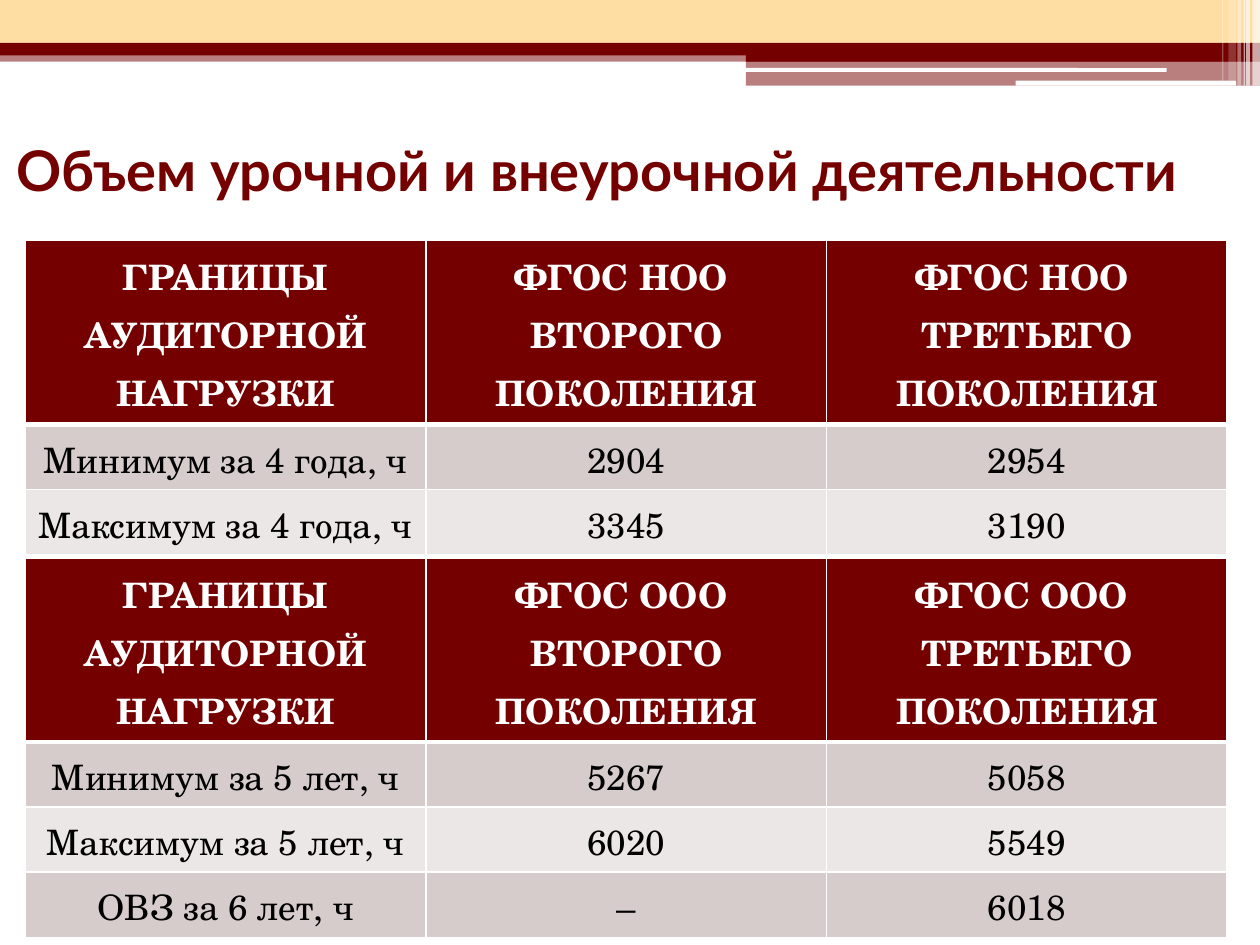
from dataclasses import dataclass

from lxml.etree import SubElement
from pptx import Presentation
from pptx.dml.color import RGBColor
from pptx.enum.shapes import MSO_SHAPE as Shape
from pptx.enum.text import MSO_ANCHOR as Anchor, PP_ALIGN as Align
from pptx.oxml.ns import qn
from pptx.util import Inches, Pt


@dataclass(frozen=True)
class Theme:
    maroon: str = "740000"
    sand: str = "FFDEA4"
    white: str = "FFFFFF"
    black: str = "000000"
    bands: tuple[str, str] = ("D6CCCC", "EBE7E7")
    title_font: str = "Lato"
    table_font: str = "TeX Gyre Schola"
    title_size: int = 32
    table_size: int = 20


@dataclass(frozen=True)
class Bar:
    x: float
    y: float
    w: float
    h: float
    color: str
    opacity: int = 100
    rounded: bool = False


@dataclass(frozen=True)
class HoursTable:
    top: float
    standard: str
    rows: list[tuple[str, str, str]]


THEME = Theme()
TABLE_LEFT, COLUMN_WIDTH = 0.2, 3.18
HEADER_HEIGHT, ROW_HEIGHT = 1.37, 0.51

BARS = [
    Bar(0, 0.4, 10, 0.09, THEME.maroon, 50),
    Bar(0, 0, 10, 0.34, THEME.sand),
    Bar(0, 0.34, 10, 0.1, THEME.maroon),
    Bar(5.92, 0.39, 4.08, 0.1, THEME.maroon),
    Bar(5.92, 0.48, 4.08, 0.2, THEME.maroon, 50),
    Bar(5.91, 0.54, 3.35, 0.03, THEME.white, rounded=True),
    Bar(8.06, 0.64, 1.75, 0.04, THEME.white, rounded=True),
    Bar(9.94, 0, 0.06, 0.68, THEME.white, 65),
    Bar(9.89, 0, 0.03, 0.68, THEME.white, 65),
    Bar(9.87, 0, 0.01, 0.68, THEME.white, 60),
    Bar(9.82, 0, 0.03, 0.68, THEME.white, 40),
    Bar(9.75, 0, 0.06, 0.64, THEME.white, 20),
    Bar(9.7, 0, 0.01, 0.64, THEME.white, 30),
]

TABLES = [
    HoursTable(1.91, "ФГОС НОО", [
        ("Минимум за 4 года, ч", "2904", "2954"),
        ("Максимум за 4 года, ч", "3345", "3190"),
    ]),
    HoursTable(4.43, "ФГОС ООО", [
        ("Минимум за 5 лет, ч", "5267", "5058"),
        ("Максимум за 5 лет, ч", "6020", "5549"),
        ("ОВЗ за 6 лет, ч", "–", "6018"),
    ]),
]


def rgb(color: str) -> RGBColor:
    return RGBColor.from_string(color)


def format_runs(p, font: str, size: int, color: str, bold: bool) -> None:
    for r in p.runs:
        r.font.name, r.font.size, r.font.bold = font, Pt(size), bold
        r.font.color.rgb = rgb(color)


def add_bar(s, bar: Bar) -> None:
    kind = Shape.ROUNDED_RECTANGLE if bar.rounded else Shape.RECTANGLE
    sp = s.shapes.add_shape(kind, *map(Inches, (bar.x, bar.y, bar.w, bar.h)))
    sp.shadow.inherit = False
    sp.line.fill.background()
    sp.fill.solid()
    sp.fill.fore_color.rgb = rgb(bar.color)
    if bar.opacity < 100:
        color = sp.fill._xPr.find(qn("a:solidFill"))[0]
        SubElement(color, qn("a:alpha"), val=str(bar.opacity * 1000))


def add_title(s, text: str) -> None:
    sp = s.shapes.title
    sp.left, sp.top, sp.width, sp.height = map(Inches, (0.03, 0.76, 10, 1.17))
    tf = sp.text_frame
    tf.text = text
    tf.word_wrap = True
    tf.vertical_anchor = Anchor.MIDDLE
    p = tf.paragraphs[0]
    p.alignment = Align.LEFT
    format_runs(p, THEME.title_font, THEME.title_size, THEME.maroon, True)


def set_borders(cell, top: int, bottom: int) -> None:
    """Draw white cell borders; top and bottom widths are in points."""
    tc_pr = cell._tc.get_or_add_tcPr()
    for side, width in (("L", 1), ("R", 1), ("T", top), ("B", bottom)):
        ln = SubElement(tc_pr, qn(f"a:ln{side}"), w=str(Pt(width)))
        fill = SubElement(ln, qn("a:solidFill"))
        SubElement(fill, qn("a:srgbClr"), val=THEME.white)


def fill_cell(cell, text: str, row: int) -> None:
    is_header = row == 0
    set_borders(cell, top=3 if row == 1 else 1, bottom=3 if is_header else 1)
    cell.fill.solid()
    cell.fill.fore_color.rgb = rgb(THEME.maroon if is_header else THEME.bands[(row - 1) % 2])
    cell.margin_left = cell.margin_right = Inches(0.05)
    cell.margin_top = cell.margin_bottom = Inches(0.04)
    cell.vertical_anchor = Anchor.MIDDLE
    cell.text_frame.text = text
    for p in cell.text_frame.paragraphs:
        p.alignment = Align.CENTER
        p.line_spacing = 1.07
        format_runs(p, THEME.table_font, THEME.table_size,
                    THEME.white if is_header else THEME.black, is_header)


def add_hours_table(s, data: HoursTable) -> None:
    header = ("ГРАНИЦЫ АУДИТОРНОЙ НАГРУЗКИ",
              f"{data.standard} \nВТОРОГО ПОКОЛЕНИЯ",
              f"{data.standard} \nТРЕТЬЕГО ПОКОЛЕНИЯ")
    rows = [header, *data.rows]
    height = HEADER_HEIGHT + ROW_HEIGHT * len(data.rows)
    table = s.shapes.add_table(
        len(rows), len(header), Inches(TABLE_LEFT), Inches(data.top),
        Inches(COLUMN_WIDTH * len(header)), Inches(height)).table
    table.horz_banding = False
    for column in table.columns:
        column.width = Inches(COLUMN_WIDTH)
    for i, texts in enumerate(rows):
        table.rows[i].height = Inches(ROW_HEIGHT if i else HEADER_HEIGHT)
        for j, text in enumerate(texts):
            fill_cell(table.cell(i, j), text, i)


def main() -> None:
    prs = Presentation()
    prs.slide_width, prs.slide_height = Inches(10), Inches(7.5)
    s = prs.slides.add_slide(prs.slide_layouts[5])
    for bar in BARS:
        add_bar(s, bar)
    add_title(s, "Объем урочной и внеурочной деятельности")
    for data in TABLES:
        add_hours_table(s, data)
    prs.save("out.pptx")


if __name__ == "__main__":
    main()
